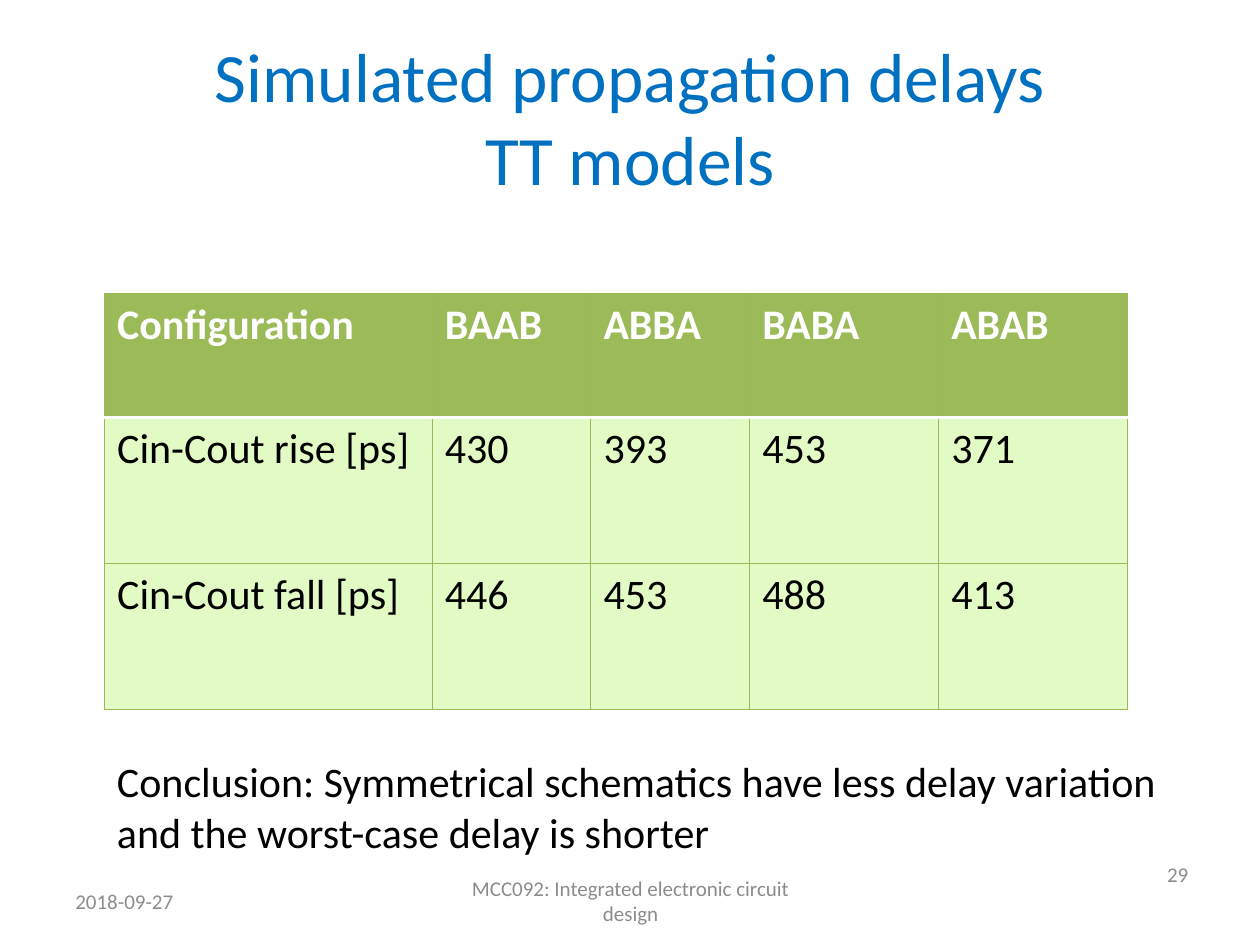
from dataclasses import dataclass

import pptx
import pptx.dml.color
import pptx.enum.text
import pptx.oxml
import pptx.oxml.ns
import pptx.util

Inches = pptx.util.Inches
Pt = pptx.util.Pt
ALIGN = pptx.enum.text.PP_ALIGN
ANCHOR = pptx.enum.text.MSO_ANCHOR

FONT = "Calibri"
BLUE, GREY, BLACK, WHITE = "0070C0", "8C8C8C", "000000", "FFFFFF"
GREEN, PALE_GREEN, BORDER_GREEN = "9BBB59", "E2FAC3", "98B955"

COL_WIDTHS = [2.6, 1.26, 1.26, 1.5, 1.5]
ROW_HEIGHTS = [0.98, 1.16, 1.16]
DELAYS = [
    ["Configuration", "BAAB", "ABBA", "BABA", "ABAB"],
    ["Cin-Cout rise [ps]", "430", "393", "453", "371"],
    ["Cin-Cout fall [ps]", "446", "453", "488", "413"],
]


@dataclass
class Label:
    text: str
    box: tuple
    size: float = 12
    color: str = GREY
    align: ALIGN = ALIGN.LEFT
    anchor: ANCHOR = ANCHOR.MIDDLE


TITLE = Label("Simulated propagation delays\vTT models", (0.5, 0.3, 9, 1.25),
              39.6, BLUE, ALIGN.CENTER)
LABELS = [
    Label("2018-09-27", (0.5, 6.95, 2.33, 0.4)),
    Label("MCC092: Integrated electronic circuit design",
          (3.42, 6.95, 3.17, 0.4), align=ALIGN.CENTER),
    Label("29", (7.2, 6.74, 2.33, 0.4), align=ALIGN.RIGHT),
    Label("Conclusion: Symmetrical schematics have less delay variation "
          "and the worst-case delay is shorter",
          (0.83, 5.95, 8.74, 0.91), 24, BLACK, anchor=ANCHOR.TOP),
]


def rgb(value: str) -> pptx.dml.color.RGBColor:
    return pptx.dml.color.RGBColor.from_string(value)


def write(tf, text: str, size: float, color: str, bold: bool = False,
          align: ALIGN = ALIGN.LEFT) -> None:
    p = tf.paragraphs[0]
    p.text = text
    p.alignment = align
    for r in p.runs:
        for name, value in {"name": FONT, "size": Pt(size), "bold": bold}.items():
            setattr(r.font, name, value)
        r.font.color.rgb = rgb(color)


def fill_label(sp, label: Label) -> None:
    for name, value in zip(("left", "top", "width", "height"), label.box):
        setattr(sp, name, Inches(value))
    tf = sp.text_frame
    settings = {"word_wrap": True, "vertical_anchor": label.anchor,
                "auto_size": pptx.enum.text.MSO_AUTO_SIZE.NONE}
    for name, value in settings.items():
        setattr(tf, name, value)
    write(tf, label.text, label.size, label.color, align=label.align)


def add_border(cell, side: str, color: str, width: float) -> None:
    ln = pptx.oxml.parse_xml(
        f'<a:ln{side} {pptx.oxml.ns.nsdecls("a")} w="{Pt(width)}">'
        f'<a:solidFill><a:srgbClr val="{color}"/></a:solidFill>'
        f'</a:ln{side}>')
    cell._tc.get_or_add_tcPr().append(ln)


def add_delay_table(s) -> None:
    table = s.shapes.add_table(
        len(DELAYS), len(COL_WIDTHS), Inches(0.83), Inches(2.33),
        Inches(sum(COL_WIDTHS)), Inches(sum(ROW_HEIGHTS))).table
    table.horz_banding = False
    for column, width in zip(table.columns, COL_WIDTHS):
        column.width = Inches(width)
    for i, (row, height) in enumerate(zip(table.rows, ROW_HEIGHTS)):
        row.height = Inches(height)
        header = i == 0
        for cell, text in zip(row.cells, DELAYS[i]):
            # The header is parted from the body by a white rule
            for side in "LRTB":
                white = (i, side) in ((0, "B"), (1, "T"))
                color, line = (WHITE, 2) if white else (BORDER_GREEN, 0.75)
                add_border(cell, side, color, line)
            cell.fill.solid()
            cell.fill.fore_color.rgb = rgb(GREEN if header else PALE_GREEN)
            write(cell.text_frame, text, 24, WHITE if header else BLACK, header)


def main() -> None:
    prs = pptx.Presentation()
    prs.slide_width, prs.slide_height = Inches(10), Inches(7.5)
    s = prs.slides.add_slide(prs.slide_layouts[5])

    # Title
    fill_label(s.shapes.title, TITLE)

    # Table of delays
    add_delay_table(s)

    # Footer and conclusion
    for label in LABELS:
        box = map(Inches, label.box)
        fill_label(s.shapes.add_textbox(*box), label)

    prs.save("out.pptx")


if __name__ == "__main__":
    main()
